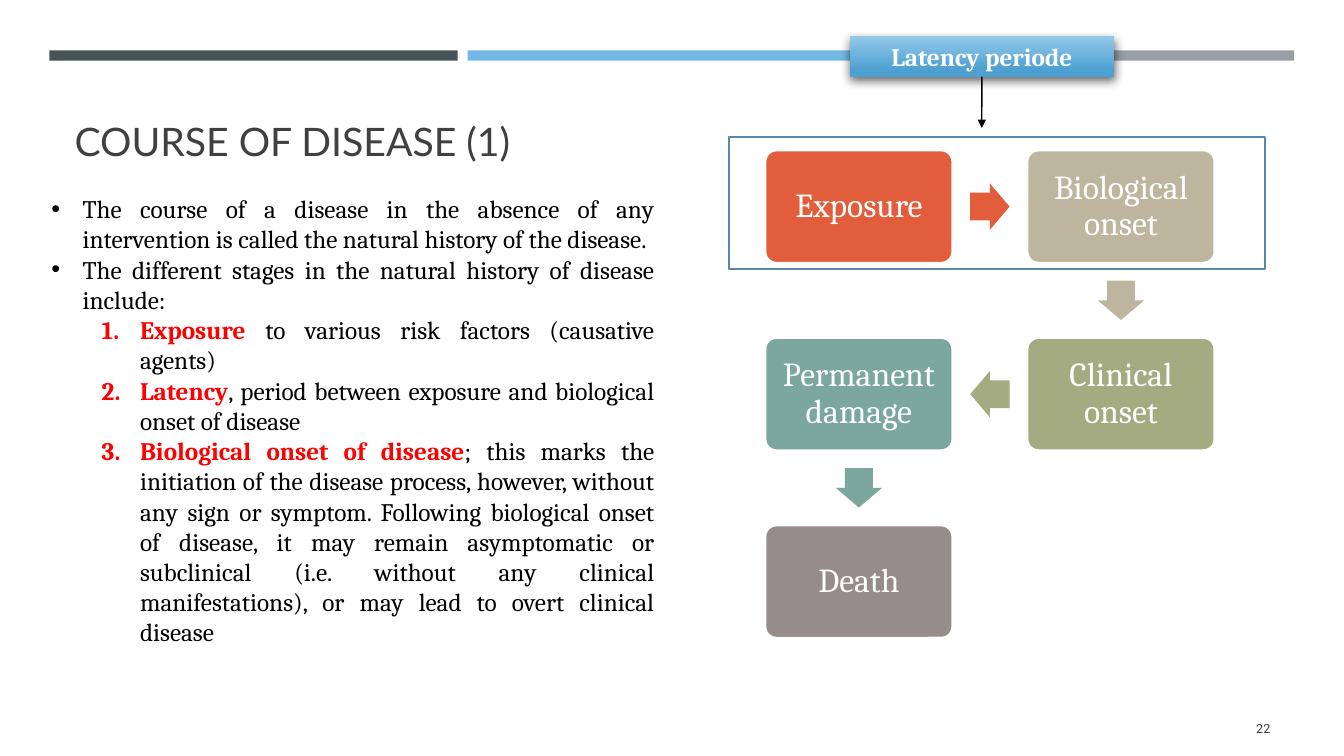
import dataclasses

import lxml.etree
import pptx
import pptx.dml.color
import pptx.enum.shapes
import pptx.enum.text
import pptx.oxml.ns
import pptx.util

SHAPES = pptx.enum.shapes.MSO_SHAPE
ALIGN = pptx.enum.text.PP_ALIGN
ANCHOR = pptx.enum.text.MSO_ANCHOR


@dataclasses.dataclass(frozen=True)
class Theme:
    heading_font: str = "Lato"
    body_font: str = "Cambria"
    number_font: str = "Roboto"
    title_size: int = 28
    stage_size: int = 24
    body_size: int = 18
    number_size: int = 9
    white: str = "FFFFFF"
    black: str = "000000"
    grey: str = "404040"
    emphasis: str = "FF0000"
    frame: str = "5489A9"
    bars: tuple = ("465359", "71B9E4", "969FA7")
    label: tuple = ((0, "93C9EA"), (0.84, "4DA0D2"))
    exposure: str = "E25D3C"
    biological: str = "BDB59D"
    clinical: str = "A5AB81"
    damage: str = "7BA79D"
    death: str = "968C8C"


THEME = Theme()


def rgb(value):
    return pptx.dml.color.RGBColor.from_string(value)


def add_xml(parent, tag, **attributes):
    element = lxml.etree.SubElement(parent, pptx.oxml.ns.qn(tag))
    for name, value in attributes.items():
        element.set(name, str(value))
    return element


def write(paragraph, text, font=THEME.body_font, size=THEME.body_size,
          color=THEME.black, bold=False, align=None):
    if align is not None:
        paragraph.alignment = align
    run = paragraph.add_run()
    run.text = text
    run.font.name = font
    run.font.size = pptx.util.Pt(size)
    run.font.bold = bold
    run.font.color.rgb = rgb(color)


class SlideBuilder:
    """Places styled elements on a slide grid of 100 columns by 100 rows."""

    def __init__(self, presentation, theme):
        self.theme = theme
        self.column = presentation.slide_width / 100
        self.row = presentation.slide_height / 100
        self.slide = presentation.slides.add_slide(presentation.slide_layouts[5])

    def place(self, left, top, width, height):
        return (round(left * self.column), round(top * self.row),
                round(width * self.column), round(height * self.row))

    def title(self, text, *area):
        title = self.slide.shapes.title
        title.left, title.top, title.width, title.height = self.place(*area)
        frame = title.text_frame
        frame.auto_size = pptx.enum.text.MSO_AUTO_SIZE.NONE
        frame.vertical_anchor = ANCHOR.BOTTOM
        write(frame.paragraphs[0], text, font=self.theme.heading_font,
              size=self.theme.title_size, color=self.theme.grey, align=ALIGN.LEFT)

    def shape(self, kind, *area, fill=None, line=None, adjustments=(), rotation=0):
        shape = self.slide.shapes.add_shape(kind, *self.place(*area))
        shape.shadow.inherit = False
        shape.rotation = rotation
        for index, value in enumerate(adjustments):
            shape.adjustments[index] = value
        if fill:
            shape.fill.solid()
            shape.fill.fore_color.rgb = rgb(fill)
        else:
            shape.fill.background()
        if line:
            shape.line.color.rgb = rgb(line)
            shape.line.width = pptx.util.Pt(1.75)
        else:
            shape.line.fill.background()
        return shape

    def stage(self, text, *area, fill):
        box = self.shape(SHAPES.ROUNDED_RECTANGLE, *area, fill=fill,
                         line=self.theme.white, adjustments=[0.1])
        frame = box.text_frame
        frame.word_wrap = True
        frame.margin_left = frame.margin_right = pptx.util.Inches(0.13)
        paragraph = frame.paragraphs[0]
        paragraph.line_spacing = 0.9
        write(paragraph, text, size=self.theme.stage_size,
              color=self.theme.white, align=ALIGN.CENTER)

    def arrow(self, center_x, center_y, fill, rotation):
        width, height = 2.93, 6.13
        self.shape(SHAPES.RIGHT_ARROW, center_x - width / 2, center_y - height / 2,
                   width, height, fill=fill, adjustments=[0.6, 0.5], rotation=rotation)

    def label(self, text, *area):
        label = self.shape(SHAPES.RECTANGLE, *area)
        label.fill.gradient()
        label.fill.gradient_angle = 270
        for stop, (position, color) in zip(label.fill.gradient_stops, self.theme.label):
            stop.position = position
            stop.color.rgb = rgb(color)
        effects = label._element.spPr.find(pptx.oxml.ns.qn("a:effectLst"))
        shadow = add_xml(effects, "a:outerShdw", blurRad=pptx.util.Pt(7),
                         dist=pptx.util.Pt(3), dir=84 * 60000, rotWithShape=0)
        color = add_xml(shadow, "a:srgbClr", val=self.theme.black)
        add_xml(color, "a:alpha", val=60000)
        write(label.text_frame.paragraphs[0], text, color=self.theme.white,
              bold=True, align=ALIGN.CENTER)
        return label

    def pointer(self, label, x, top, bottom):
        start_x, start_y, end_x, end_y = self.place(x, top, x, bottom)
        pointer = self.slide.shapes.add_connector(
            pptx.enum.shapes.MSO_CONNECTOR.STRAIGHT, start_x, start_y, end_x, end_y)
        pointer.begin_connect(label, 2)
        pointer.line.color.rgb = rgb(self.theme.black)
        pointer.line.width = pptx.util.Pt(1)
        properties = pointer._element.spPr
        add_xml(properties.find(pptx.oxml.ns.qn("a:ln")), "a:tailEnd", type="triangle")
        add_xml(properties, "a:effectLst")

    def text_box(self, *area, anchor=ANCHOR.TOP):
        frame = self.slide.shapes.add_textbox(*self.place(*area)).text_frame
        frame.word_wrap = True
        frame.vertical_anchor = anchor
        return frame

    def outline(self, items, *area):
        frame = self.text_box(*area)
        for index, (term, text) in enumerate(items):
            paragraph = frame.add_paragraph() if index else frame.paragraphs[0]
            indent, hanging = (0.88, 0.38) if term else (0.31, 0.31)
            properties = paragraph._p.get_or_add_pPr()
            properties.set("marL", str(pptx.util.Inches(indent)))
            properties.set("indent", str(-pptx.util.Inches(hanging)))
            if term:
                paragraph.level = 1
                add_xml(properties, "a:buFont", typeface="+mj-lt")
                add_xml(properties, "a:buAutoNum", type="arabicPeriod")
                write(paragraph, term, color=self.theme.emphasis, bold=True)
            else:
                add_xml(properties, "a:buFont", typeface="Arial")
                add_xml(properties, "a:buChar", char="•")
            write(paragraph, text, align=ALIGN.JUSTIFY)


OUTLINE = [
    (None, "The course of a disease in the absence of any intervention is called "
           "the natural history of the disease."),
    (None, "The different stages in the natural history of disease include:"),
    ("Exposure", " to various risk factors (causative agents)"),
    ("Latency", ", period between exposure and biological onset of disease"),
    ("Biological onset of disease",
     "; this marks the initiation of the disease process, however, without any sign "
     "or symptom. Following biological onset of disease, it may remain asymptomatic "
     "or subclinical (i.e. without any clinical manifestations), or may lead to "
     "overt clinical disease"),
]

STAGES = [
    ("Exposure", THEME.exposure, 0, 0),
    ("Biological onset", THEME.biological, 1, 0),
    ("Clinical onset", THEME.clinical, 1, 1),
    ("Permanent damage", THEME.damage, 0, 1),
    ("Death", THEME.death, 0, 2),
]
ROTATIONS = {(1, 0): 0, (0, 1): 90, (-1, 0): 180}


def draw_flow(builder):
    left, top, width, height = 56.93, 19.87, 13.95, 14.93
    step_x, step_y = 19.5, 24.8
    for text, fill, column, row in STAGES:
        builder.stage(text, left + column * step_x, top + row * step_y,
                      width, height, fill=fill)
    for (_, fill, column, row), (_, _, next_column, next_row) in zip(STAGES, STAGES[1:]):
        builder.arrow(left + width / 2 + (column + next_column) / 2 * step_x,
                      top + height / 2 + (row + next_row) / 2 * step_y, fill,
                      ROTATIONS[next_column - column, next_row - row])


def main():
    presentation = pptx.Presentation()
    presentation.slide_width = pptx.util.Inches(13.33)
    presentation.slide_height = pptx.util.Inches(7.5)
    builder = SlideBuilder(presentation, THEME)
    for index, color in enumerate(THEME.bars):
        builder.shape(SHAPES.RECTANGLE, 3.68 + index * 31.12, 6.67, 30.38, 1.36, fill=color)
    builder.title("COURSE OF DISEASE (1)", 4.8, 10.13, 39.9, 12.27)
    draw_flow(builder)
    label = builder.label("Latency periode", 63.23, 4.8, 19.65, 5.33)
    builder.pointer(label, 73.05, 10.13, 16.93)
    builder.shape(SHAPES.RECTANGLE, 54.23, 18.13, 39.9, 17.47, line=THEME.frame)
    builder.outline(OUTLINE, 3.08, 24.93, 46.35, 66)
    number = builder.text_box(86.63, 93.73, 8.63, 5.33, anchor=ANCHOR.MIDDLE)
    write(number.paragraphs[0], "22", font=THEME.number_font,
          size=THEME.number_size, color=THEME.grey, align=ALIGN.RIGHT)
    presentation.save("out.pptx")


if __name__ == "__main__":
    main()
